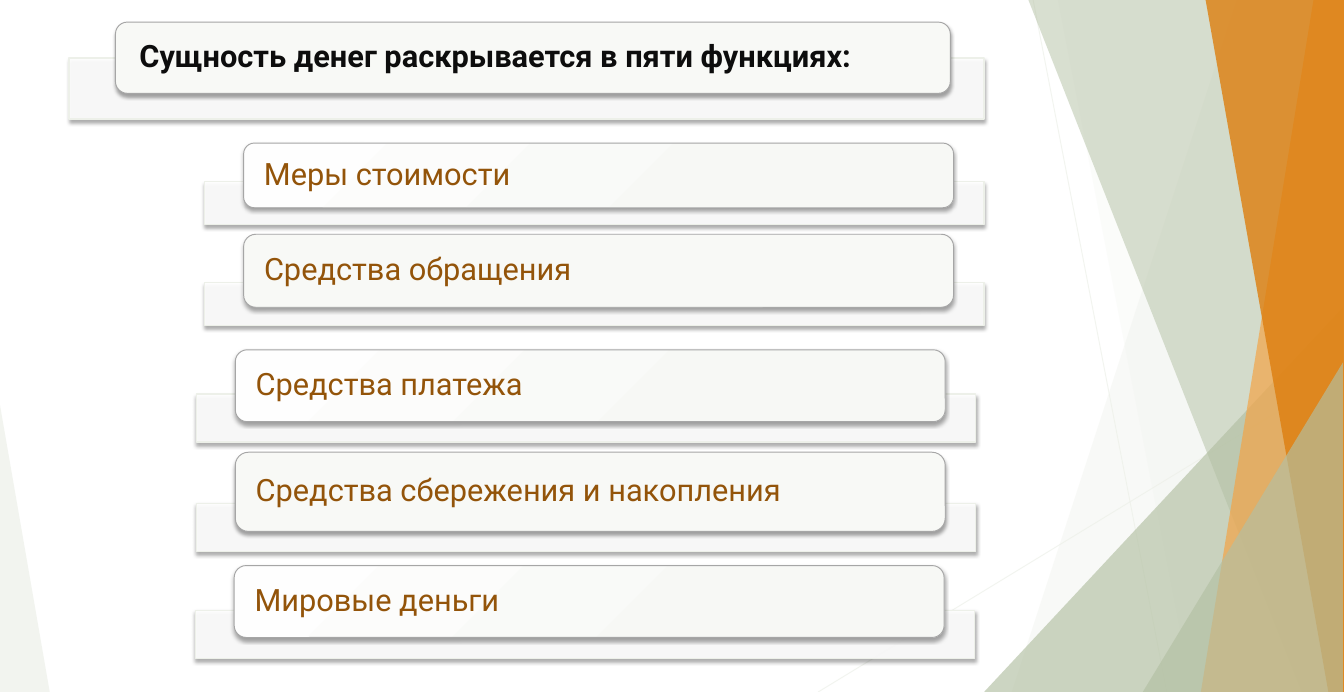
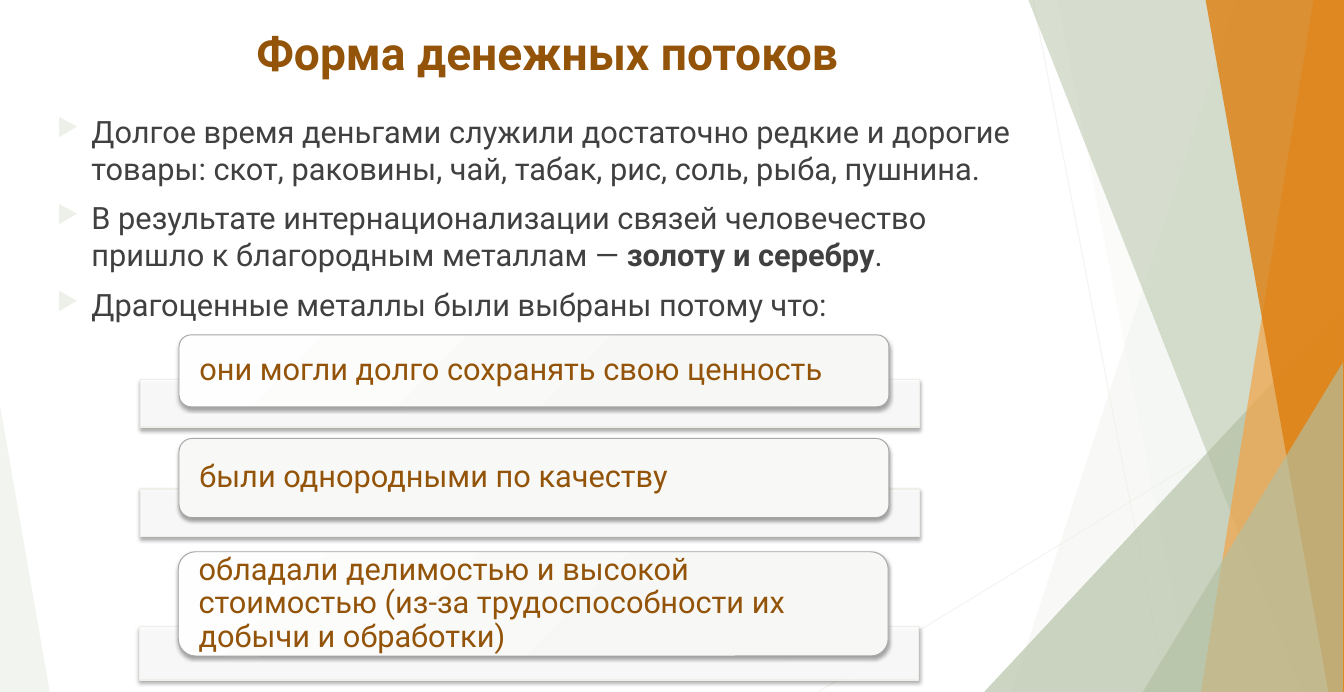
"""Build two slides about the functions of money and the forms of money flows."""
from lxml import etree
from pptx import Presentation
from pptx.dml.color import RGBColor
from pptx.enum import shapes, text
from pptx.oxml import ns
from pptx.util import Cm, Pt

COLOURS = {
    "mist": "EDF0E9", "sage": "B3C0A3", "amber": "F3A447", "orange": "DD7E0E",
    "brown": "93540A", "ink": "0D0D0D", "body": "404040",
    "white": "FFFFFF", "card": "F8F9F6", "edge": "A6A6A6", "shadow": "000000",
}
FONT = "Roboto"
WIDTH, HEIGHT = 37.01, 19.05
TRAY_WIDTH, CARD_INDENT, CARD_WIDTH = 21.46, 1.07, 19.55
CARD_INSET, HEADING_INSET = 0.56, 0.66
CORNER = 0.1667
SHEEN = [(0, "FEFEFE"), (74, "F7F8F5"), (83, "F7F8F5"), (100, "FAFBF8")]

RAYS = [((28.45, 0), (32.13, 19.05)), ((36.98, 10.24), (22.53, 19.05))]
SHARDS = [
    ("quad", 34.06, 27.86, "mist", 36),
    ("quad", 29.13, 32.82, "mist", 20),
    ("triangle", (27.1, 8.46, 9.88), 1, "sage", 66),
    ("quad", 28.32, 35.84, "sage", 50),
    ("quad", 36.17, 33.07, "amber", 70),
    ("quad", 33.2, 36.58, "orange", 80),
    ("triangle", (31.47, 9.98, 5.51), 1, "sage", 66),
    ("triangle", (0, 11.15, 1.37), 0, "mist", 70),
]

HEADING = "Сущность денег раскрывается в пяти функциях:"
HEADING_TRAY = (1.9, 1.6, 25.2, 1.68)
HEADING_CARD = (3.18, 0.61, 22.99, 1.96)

FUNCTIONS = [
    ("Меры стоимости", 5.64, (5, 1.19), (3.94, 1.78)),
    ("Средства обращения", 5.64, (7.77, 1.19), (6.45, 2.01)),
    ("Средства платежа", 5.41, (10.85, 1.32), (9.63, 1.98)),
    ("Средства сбережения и накопления", 5.41, (13.87, 1.32), (12.45, 2.18)),
    ("Мировые деньги", 5.38, (16.81, 1.32), (15.57, 1.98)),
]
REASONS = [
    ("они могли долго сохранять свою ценность", 3.86, (10.44, 1.32), (9.22, 1.98)),
    ("были однородными по качеству", 3.86, (13.46, 1.32), (12.07, 2.18)),
    ("обладали делимостью и высокой стоимостью (из-за трудоспособности их добычи и обработки)",
     3.84, (17.25, 1.47), (15.19, 2.87)),
]

TITLE = "Форма денежных потоков"
BULLETS = [
    [("Долгое время деньгами служили достаточно редкие и дорогие товары: "
      "скот, раковины, чай, табак, рис, соль, рыба, пушнина.", False)],
    [("В результате интернационализации связей человечество пришло к благородным металлам — ", False),
     ("золоту и серебру", True), (".", False)],
    [("Драгоценные металлы были выбраны потому что:", False)],
]


def rgb(name):
    return RGBColor.from_string(COLOURS[name])


def add_xml(parent, tag, **attributes):
    return etree.SubElement(parent, ns.qn(tag), attributes)


def fade(shape, percent):
    for colour in shape._element.spPr.iter(ns.qn("a:srgbClr")):
        add_xml(colour, "a:alpha", val=str(percent * 1000))


def paint(shape, colour, opacity=100):
    shape.shadow.inherit = False
    shape.fill.solid()
    shape.fill.fore_color.rgb = rgb(colour)
    if opacity < 100:
        fade(shape, opacity)
    shape.line.fill.background()


def outline(shape, colour, width):
    shape.line.color.rgb = rgb(colour)
    shape.line.width = Pt(width)


def drop_shadow(shape):
    effects = shape._element.spPr.find(ns.qn("a:effectLst"))
    shadow = add_xml(effects, "a:outerShdw", blurRad=str(Pt(3)), dist=str(Pt(2)),
                     dir="5400000", rotWithShape="0")
    colour = add_xml(shadow, "a:srgbClr", val=COLOURS["shadow"])
    add_xml(colour, "a:alpha", val="35000")


def add_sheen(shape):
    shape.fill.gradient()
    shape.fill.gradient_angle = 315
    stops = shape._element.spPr.find(ns.qn("a:gradFill")).find(ns.qn("a:gsLst"))
    for stop in list(stops):
        stops.remove(stop)
    for position, colour in SHEEN:
        stop = add_xml(stops, "a:gs", pos=str(position * 1000))
        add_xml(stop, "a:srgbClr", val=colour)


def style(para, size, colour, bold=False):
    para.font.name = FONT
    para.font.size = Pt(size)
    para.font.bold = bold
    para.font.color.rgb = rgb(colour)


def add_preset(page, kind, box):
    return page.shapes.add_shape(kind, *map(Cm, box))


def add_backdrop(page):
    for start, end in RAYS:
        ray = page.shapes.add_connector(
            shapes.MSO_CONNECTOR.STRAIGHT, *map(Cm, start + end))
        outline(ray, "mist", 0.75)
        fade(ray, 70)
        add_xml(ray._element.spPr, "a:effectLst")
    for kind, place, slant, colour, opacity in SHARDS:
        if kind == "triangle":
            left, top, width = place
            shard = add_preset(page, shapes.MSO_SHAPE.ISOSCELES_TRIANGLE,
                               (left, top, width, HEIGHT - top))
            shard.adjustments[0] = slant
        else:
            builder = page.shapes.build_freeform(Cm(place), 0)
            corners = [(WIDTH, 0), (WIDTH, HEIGHT), (slant, HEIGHT)]
            builder.add_line_segments([(Cm(x), Cm(y)) for x, y in corners])
            shard = builder.convert_to_shape()
        paint(shard, colour, opacity)


def add_banner(page, words, tray_box, card_box, inset, colour, bold=False, sheen=False):
    tray = add_preset(page, shapes.MSO_SHAPE.RECTANGLE, tray_box)
    paint(tray, "white", 90)
    outline(tray, "mist", 1)
    drop_shadow(tray)

    card = add_preset(page, shapes.MSO_SHAPE.ROUNDED_RECTANGLE, card_box)
    card.adjustments[0] = CORNER
    paint(card, "card")
    if sheen:
        add_sheen(card)
    outline(card, "edge", 0.75)
    drop_shadow(card)

    frame = card.text_frame
    frame.word_wrap = True
    frame.vertical_anchor = text.MSO_ANCHOR.MIDDLE
    corner_inset = 0.29 * CORNER * card_box[3]
    frame.margin_left = frame.margin_right = Cm(inset - corner_inset)
    frame.margin_top = frame.margin_bottom = 0
    para = frame.paragraphs[0]
    para.text = words
    para.alignment = text.PP_ALIGN.LEFT
    para.line_spacing = 0.9
    style(para, 24, colour, bold)


def add_banners(page, rows):
    for index, (words, left, (tray_top, tray_height), (card_top, card_height)) in enumerate(rows):
        add_banner(page, words,
                   (left, tray_top, TRAY_WIDTH, tray_height),
                   (left + CARD_INDENT, card_top, CARD_WIDTH, card_height),
                   CARD_INSET, "brown", sheen=index % 2 == 0)


def add_text_frame(page, *box):
    frame = page.shapes.add_textbox(*map(Cm, box)).text_frame
    frame.word_wrap = True
    return frame


def add_title(page):
    para = add_text_frame(page, 2.03, 0.56, 26.09, 1.8).paragraphs[0]
    para.text = TITLE
    para.alignment = text.PP_ALIGN.CENTER
    style(para, 36, "brown", True)


def add_bullets(page):
    frame = add_text_frame(page, 1.32, 2.97, 27.1, 6)
    for index, runs in enumerate(BULLETS):
        para = frame.add_paragraph() if index else frame.paragraphs[0]
        para.space_before = Pt(10)
        properties = para._p.get_or_add_pPr()
        properties.set("marL", str(Cm(0.95)))
        properties.set("indent", str(-Cm(0.95)))
        colour = add_xml(properties, "a:buClr")
        add_xml(colour, "a:srgbClr", val=COLOURS["mist"])
        add_xml(properties, "a:buSzPct", val="80000")
        add_xml(properties, "a:buChar", char="▶")
        style(para, 24, "body")
        for words, bold in runs:
            span = para.add_run()
            span.text = words
            if bold:
                span.font.bold = True


def add_page(deck):
    page = deck.slides.add_slide(deck.slide_layouts[6])
    add_backdrop(page)
    return page


def main():
    deck = Presentation()
    deck.slide_width, deck.slide_height = Cm(WIDTH), Cm(HEIGHT)

    functions_page = add_page(deck)
    add_banner(functions_page, HEADING, HEADING_TRAY, HEADING_CARD,
               HEADING_INSET, "ink", bold=True)
    add_banners(functions_page, FUNCTIONS)

    flows_page = add_page(deck)
    add_title(flows_page)
    add_bullets(flows_page)
    add_banners(flows_page, REASONS)

    deck.save("out.pptx")


if __name__ == "__main__":
    main()
